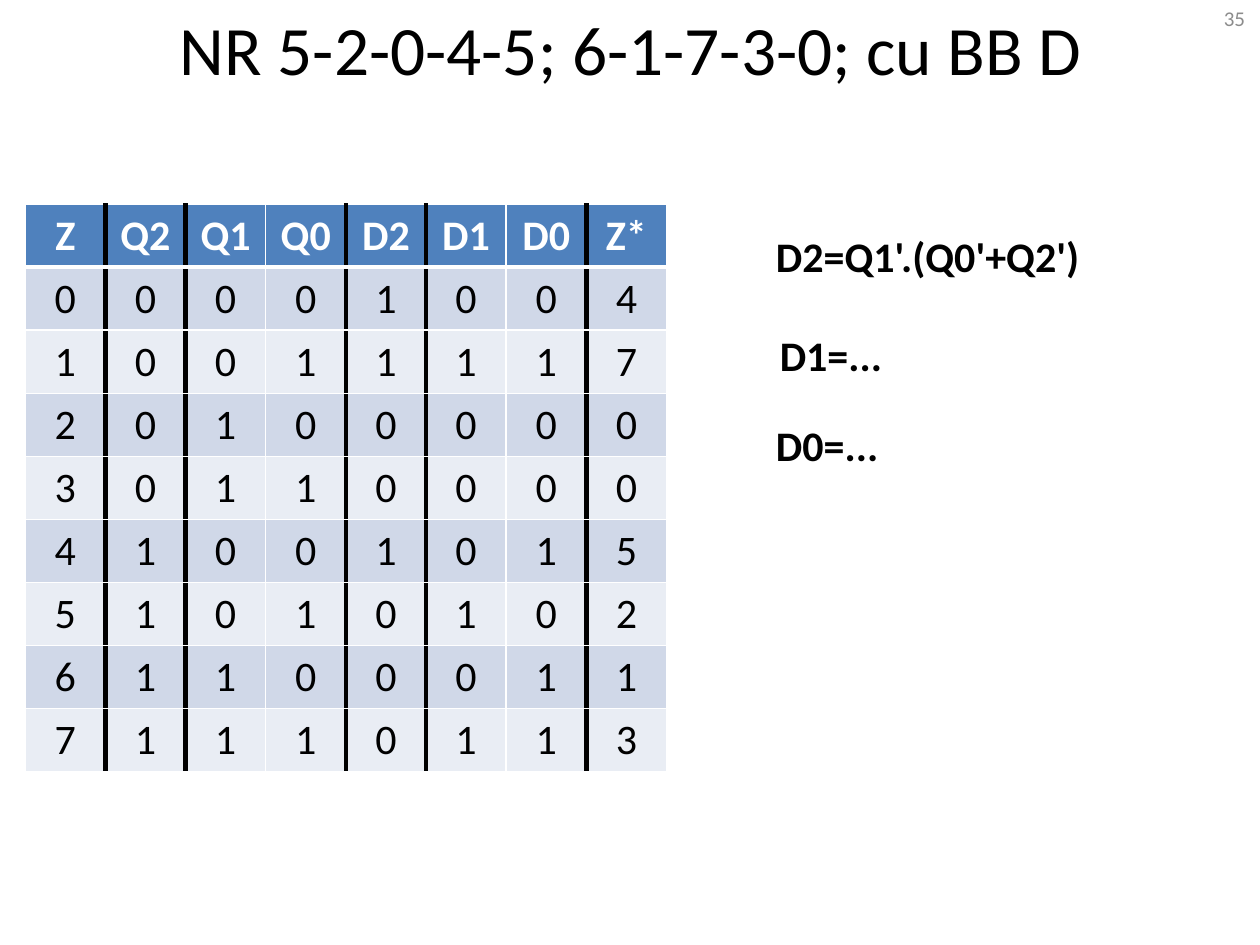
from lxml.etree import SubElement
from pptx import Presentation
from pptx.dml.color import RGBColor
from pptx.enum.text import MSO_ANCHOR, MSO_AUTO_SIZE, PP_ALIGN
from pptx.oxml.ns import qn
from pptx.util import Inches, Pt

BLACK = RGBColor(0x00, 0x00, 0x00)
WHITE = RGBColor(0xFF, 0xFF, 0xFF)
GRAY = RGBColor(0x8C, 0x8C, 0x8C)
HEADER_BLUE = RGBColor(0x4F, 0x81, 0xBD)
BAND_DARK = RGBColor(0xD0, 0xD8, 0xE8)
BAND_LIGHT = RGBColor(0xE9, 0xED, 0xF4)

HEADER = ["Z", "Q2", "Q1", "Q0", "D2", "D1", "D0", "Z*"]
NEXT_STATES = [4, 7, 0, 0, 5, 2, 1, 3]
THICK_AFTER = {0, 1, 3, 4, 6}  # columns with a heavy rule on their right


class SlideBuilder:
    """Holds the style and the slide; lengths are percent of the slide's size."""

    font_name = "Calibri"
    body_size = 24

    def __init__(self, presentation):
        self.width = presentation.slide_width
        self.height = presentation.slide_height
        self.slide = presentation.slides.add_slide(presentation.slide_layouts[6])

    def box(self, left, top, width, height):
        return (int(self.width * left / 100), int(self.height * top / 100),
                int(self.width * width / 100), int(self.height * height / 100))

    def fill_text(self, frame, text, size=body_size, color=BLACK, bold=False,
                  align=PP_ALIGN.LEFT):
        paragraph = frame.paragraphs[0]
        paragraph.alignment = align
        run = paragraph.add_run()
        run.text = text
        style = {"name": self.font_name, "size": Pt(size), "bold": bold}
        for attribute, value in style.items():
            setattr(run.font, attribute, value)
        run.font.color.rgb = color

    def text(self, area, text, frame_format, **style):
        frame = self.slide.shapes.add_textbox(*self.box(*area)).text_frame
        for attribute, value in frame_format.items():
            setattr(frame, attribute, value)
        self.fill_text(frame, text, **style)

    def borders(self, cell, edges):
        """Edges map L, R, T, B (in this order) to a colour and a width."""
        properties = cell._tc.get_or_add_tcPr()
        for position, (side, (color, points)) in enumerate(edges.items()):
            line = SubElement(properties, qn(f"a:ln{side}"), w=str(Pt(points)))
            fill = SubElement(line, qn("a:solidFill"))
            SubElement(fill, qn("a:srgbClr"), val=str(color))
            properties.insert(position, line)

    def state_table(self, area, rows):
        left, top, width, height = self.box(*area)
        table = self.slide.shapes.add_table(
            len(rows), len(rows[0]), left, top, width, height).table
        table.horz_banding = False
        thin, header_rule, heavy = (WHITE, 1), (WHITE, 3), (BLACK, 3)
        for r, values in enumerate(rows):
            fill = BAND_DARK if r % 2 else BAND_LIGHT
            if r == 0:
                fill = HEADER_BLUE
            for c, value in enumerate(values):
                cell = table.cell(r, c)
                cell.fill.solid()
                cell.fill.fore_color.rgb = fill
                self.fill_text(cell.text_frame, value, bold=r == 0,
                               color=WHITE if r == 0 else BLACK,
                               align=PP_ALIGN.CENTER)
                self.borders(cell, {
                    "L": heavy if c - 1 in THICK_AFTER else thin,
                    "R": heavy if c in THICK_AFTER else thin,
                    "T": header_rule if r == 1 else thin,
                    "B": header_rule if r == 0 else thin,
                })


def main():
    presentation = Presentation()
    presentation.slide_width = Inches(10)
    presentation.slide_height = Inches(7.5)
    builder = SlideBuilder(presentation)

    # Title and page number
    middle = {"word_wrap": True, "vertical_anchor": MSO_ANCHOR.MIDDLE}
    builder.text((5.1, 0, 90, 10.1), "NR 5-2-0-4-5; 6-1-7-3-0; cu BB D", middle,
                 size=39.6, align=PP_ALIGN.CENTER)
    builder.text((95.7, 0, 4.1, 3.9), "35", middle,
                 size=12, color=GRAY, align=PP_ALIGN.RIGHT)

    # Transition table: Q bits encode the state, D bits the next state
    transitions = [[str(state), *f"{state:03b}", *f"{following:03b}", str(following)]
                   for state, following in enumerate(NEXT_STATES)]
    builder.state_table((2, 21.6, 50.9, 60), [HEADER, *transitions])

    # Input equations
    fitted = {"word_wrap": False, "auto_size": MSO_AUTO_SIZE.SHAPE_TO_FIT_TEXT}
    equations = [("D2=Q1'.(Q0'+Q2')", 60.6, 23.75, 26.6),
                 ("D1=...", 60.9, 34.25, 10.2),
                 ("D0=...", 60.6, 43.75, 10.2)]
    for equation, left, top, width in equations:
        builder.text((left, top, width, 6.7), equation, fitted, bold=True)

    presentation.save("out.pptx")


if __name__ == "__main__":
    main()
